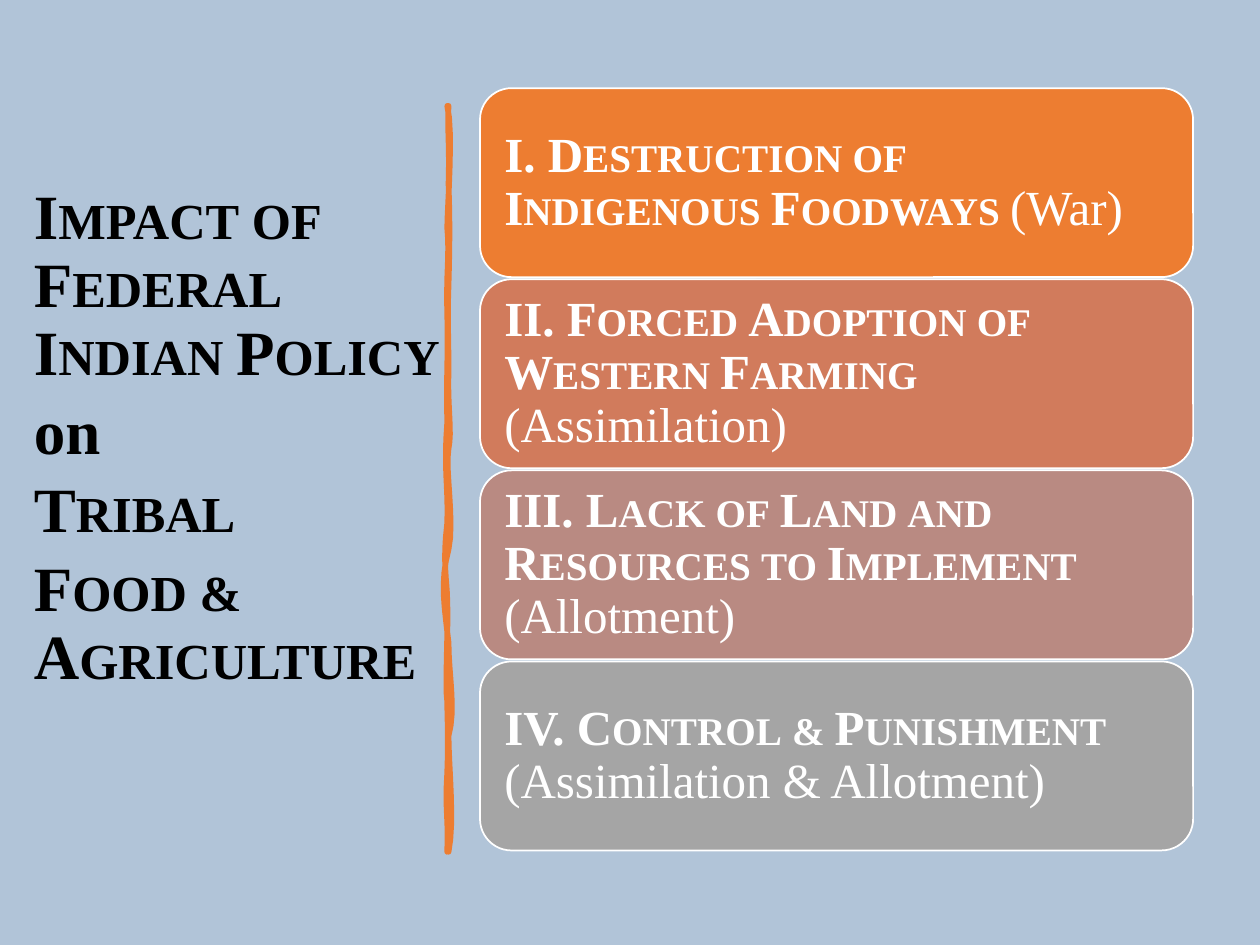
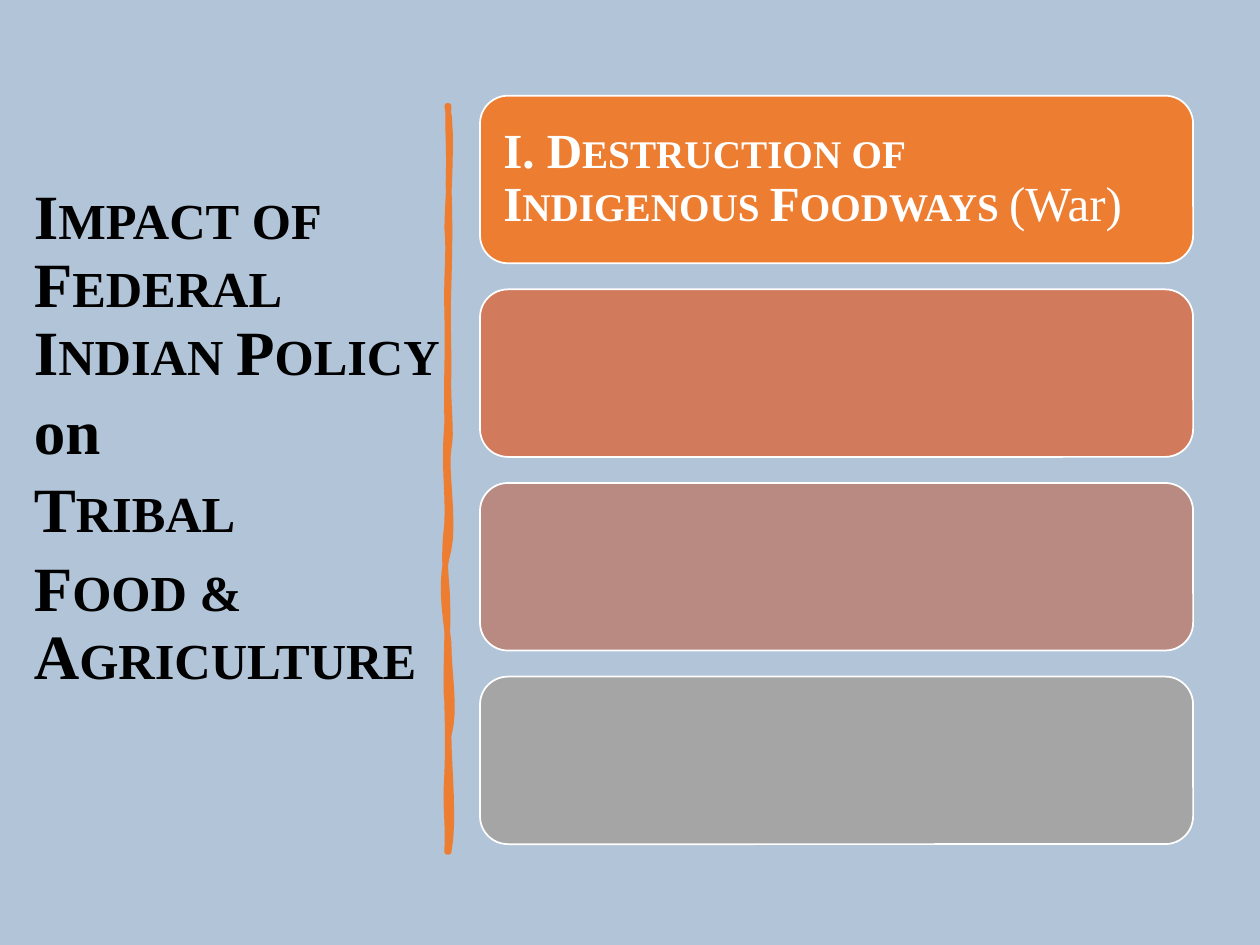
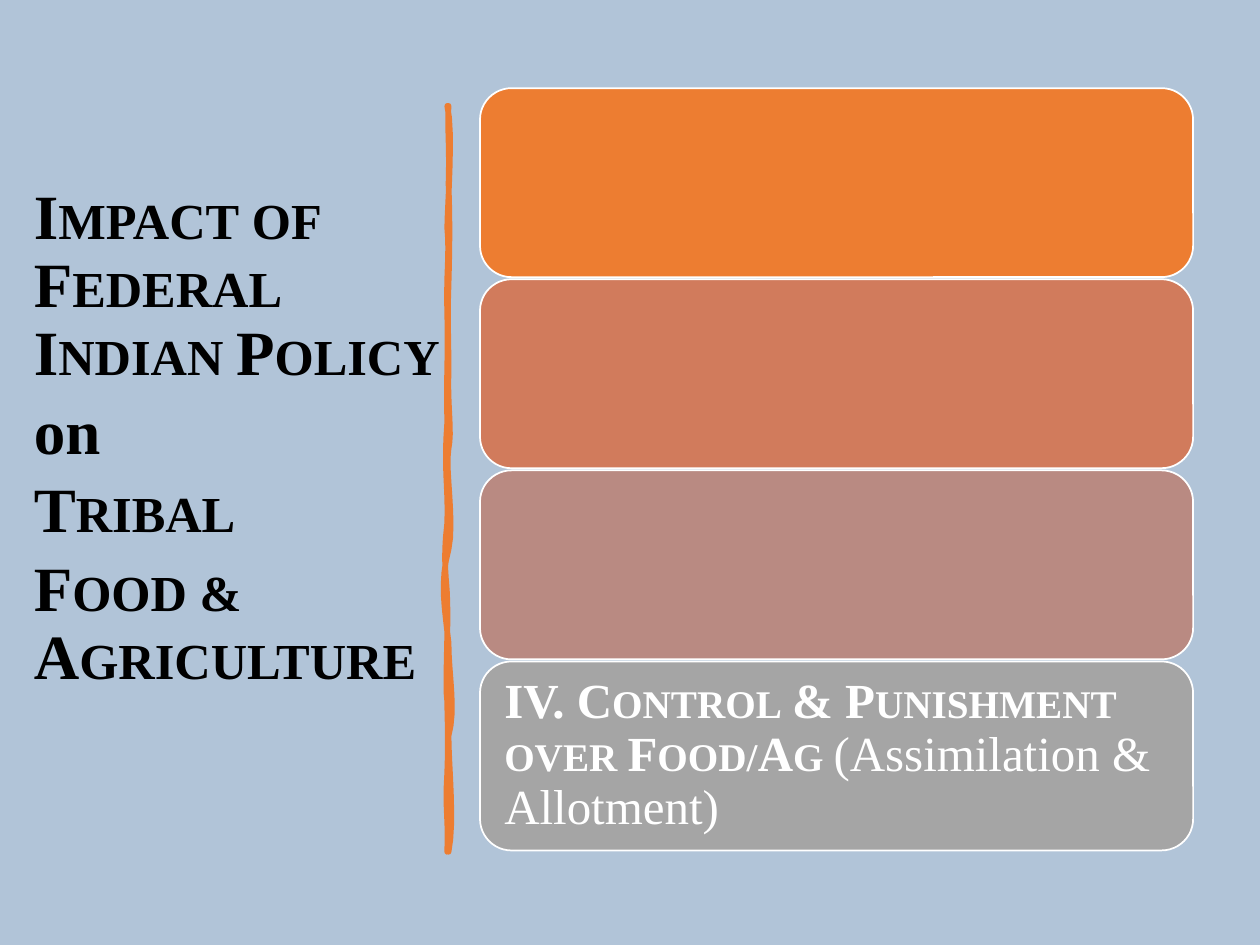
"""Build three slides on federal Indian policy, each with a title, a brushed divider and a stack of cards."""
from copy import deepcopy
from dataclasses import dataclass
from typing import NamedTuple

from lxml.etree import SubElement
from pptx import Presentation
from pptx.dml.color import RGBColor
from pptx.enum.shapes import MSO_SHAPE
from pptx.enum.text import MSO_ANCHOR, PP_ALIGN
from pptx.oxml.ns import qn
from pptx.util import Inches, Pt

COLORS = {
    "background": "336699",
    "title": "000000",
    "divider": "ED7D31",
    "white": "FFFFFF",
    "destruction": "ED7D31",
    "adoption": "D17B5C",
    "resources": "B98A82",
    "control": "A5A5A5",
}
CARD_COLORS = ("destruction", "adoption", "resources", "control")
FONT = "Times New Roman"
BACKGROUND_OPACITY = 38
CURVE_STEPS = 8

DIVIDER_START = (3.56, 0.84)
DIVIDER_CURVES = (
    ((3.55, 1.03), (3.57, 1.16), (3.56, 1.46)),
    ((3.57, 1.74), (3.57, 1.91), (3.56, 2.26)),
    ((3.55, 2.58), (3.56, 2.62), (3.56, 2.94)),
    ((3.55, 3.25), (3.59, 3.42), (3.56, 3.56)),
    ((3.53, 3.72), (3.61, 4.14), (3.56, 4.36)),
    ((3.49, 4.62), (3.53, 4.83), (3.56, 5.10)),
    ((3.56, 5.35), (3.62, 5.63), (3.56, 5.84)),
    ((3.56, 6.06), (3.61, 6.53), (3.56, 6.76)),
    ((3.56, 6.75), (3.55, 6.76), (3.55, 6.76)),
    ((3.56, 6.45), (3.53, 6.44), (3.55, 6.13)),
    ((3.56, 5.83), (3.55, 5.70), (3.55, 5.57)),
    ((3.53, 5.46), (3.56, 4.94), (3.55, 4.77)),
    ((3.55, 4.62), (3.51, 4.47), (3.55, 4.15)),
    ((3.56, 3.86), (3.52, 3.73), (3.55, 3.35)),
    ((3.54, 3.00), (3.56, 2.79), (3.55, 2.50)),
    ((3.54, 2.16), (3.57, 2.03), (3.55, 1.81)),
    ((3.55, 1.65), (3.60, 1.04), (3.55, 0.84)),
)


class Words(NamedTuple):
    """A stretch of text in one style."""
    text: str
    bold: bool = True
    small_caps: bool = False


@dataclass(frozen=True)
class CardStack:
    """Four evenly spaced cards, some of them with text."""
    first_top: float
    last_top: float
    height: float
    texts: tuple[tuple[Words, ...], ...]


TITLE = (
    Words("Impact of Federal Indian Policy", small_caps=True),
    Words("on"),
    Words("Tribal", small_caps=True),
    Words("Food & Agriculture", small_caps=True),
)
DESTRUCTION = (
    Words("I. "),
    Words("Destruction of Indigenous Foodways ", small_caps=True),
    Words("(War)", bold=False),
)
ADOPTION = (
    Words("II. "),
    Words("Forced Adoption of Western Farming ", small_caps=True),
    Words("(Assimilation)", bold=False),
)
RESOURCES = (
    Words("III. "),
    Words("Lack of Land and Resources to Implement ", small_caps=True),
    Words("(Allotment)", bold=False),
)
CONTROL = (
    Words("IV. "),
    Words("Control & Punishment ", small_caps=True),
    Words("(Assimilation & Allotment)", bold=False),
)
CONTROL_OVER_FOOD = (
    Words("IV. "),
    Words("Control ", small_caps=True),
    Words("& "),
    Words("Punishment over Food/Ag ", small_caps=True),
    Words("(Assimilation & Allotment)", bold=False),
)
STACKS = (
    CardStack(0.7, 5.25, 1.5, (DESTRUCTION, ADOPTION, RESOURCES, CONTROL)),
    CardStack(0.76, 5.37, 1.33, (DESTRUCTION, (), (), ())),
    CardStack(0.7, 5.25, 1.5, ((), (), (), CONTROL_OVER_FOOD)),
)


def color(name: str) -> RGBColor:
    """Look up a named colour."""
    return RGBColor.from_string(COLORS[name])


def add_words(para, words: Words, size: int, color_name: str):
    """Append one styled run to a paragraph."""
    span = para.add_run()
    span.text = words.text
    span.font.name = FONT
    span.font.size = Pt(size)
    span.font.bold = words.bold
    span.font.color.rgb = color(color_name)
    if words.small_caps:
        span.font._element.set("cap", "small")
    return span


def paint_background(page) -> None:
    """Fill the page with the translucent background colour."""
    fill = page.background.fill
    fill.solid()
    fill.fore_color.rgb = color("background")
    tint = page.background._cSld.find(f".//{qn('a:srgbClr')}")
    SubElement(tint, qn("a:alpha"), val=str(BACKGROUND_OPACITY * 1000))


def add_title(page) -> None:
    """Write the title at the left, closed by an empty line."""
    box = page.shapes.add_textbox(Inches(0.17), Inches(0.7), Inches(3.51), Inches(6.11))
    frame = box.text_frame
    frame.word_wrap = True
    frame.vertical_anchor = MSO_ANCHOR.MIDDLE
    for index, words in enumerate(TITLE):
        para = frame.add_paragraph() if index else frame.paragraphs[0]
        para.line_spacing = 0.9
        para.space_after = Pt(6)
        span = add_words(para, words, 36, "title")
    para.add_line_break()
    para._p[-1].append(deepcopy(span.font._element))
    SubElement(para._p, qn("a:endParaRPr"), sz="3600")


def divider_points() -> list[tuple[int, int]]:
    """Sample the cubic curves of the divider's outline."""
    points = []
    start = DIVIDER_START
    for first, second, end in DIVIDER_CURVES:
        for step in range(1, CURVE_STEPS + 1):
            t = step / CURVE_STEPS
            points.append(tuple(
                Inches((1 - t) ** 3 * a + 3 * (1 - t) ** 2 * t * b + 3 * (1 - t) * t ** 2 * c + t ** 3 * d)
                for a, b, c, d in zip(start, first, second, end)
            ))
        start = end
    return points


def add_divider(page) -> None:
    """Draw the brushed vertical line."""
    left, top = DIVIDER_START
    builder = page.shapes.build_freeform(Inches(left), Inches(top))
    builder.add_line_segments(divider_points(), close=True)
    divider = builder.convert_to_shape()
    divider.shadow.inherit = False
    divider.fill.solid()
    divider.fill.fore_color.rgb = color("divider")
    divider.line.color.rgb = color("divider")
    divider.line.width = Pt(3.25)


def add_cards(page, stack: CardStack) -> None:
    """Draw the stack of rounded cards."""
    pitch = (stack.last_top - stack.first_top) / (len(CARD_COLORS) - 1)
    for index, (color_name, text) in enumerate(zip(CARD_COLORS, stack.texts)):
        card = page.shapes.add_shape(
            MSO_SHAPE.ROUNDED_RECTANGLE,
            Inches(3.81), Inches(stack.first_top + index * pitch),
            Inches(5.66), Inches(stack.height),
        )
        card.shadow.inherit = False
        card.fill.solid()
        card.fill.fore_color.rgb = color(color_name)
        card.line.color.rgb = color("white")
        card.line.width = Pt(1)
        frame = card.text_frame
        frame.word_wrap = True
        frame.vertical_anchor = MSO_ANCHOR.MIDDLE
        frame.margin_left = frame.margin_right = Inches(0.12)
        frame.margin_top = frame.margin_bottom = Inches(0.12)
        para = frame.paragraphs[0]
        para.alignment = PP_ALIGN.LEFT
        para.line_spacing = 0.9
        for words in text:
            add_words(para, words, 28, "white")


def main() -> None:
    """Build and save the deck."""
    deck = Presentation()
    deck.slide_width = Inches(10)
    deck.slide_height = Inches(7.5)
    for stack in STACKS:
        page = deck.slides.add_slide(deck.slide_layouts[6])
        paint_background(page)
        add_title(page)
        add_divider(page)
        add_cards(page, stack)
    deck.save("out.pptx")


if __name__ == "__main__":
    main()
